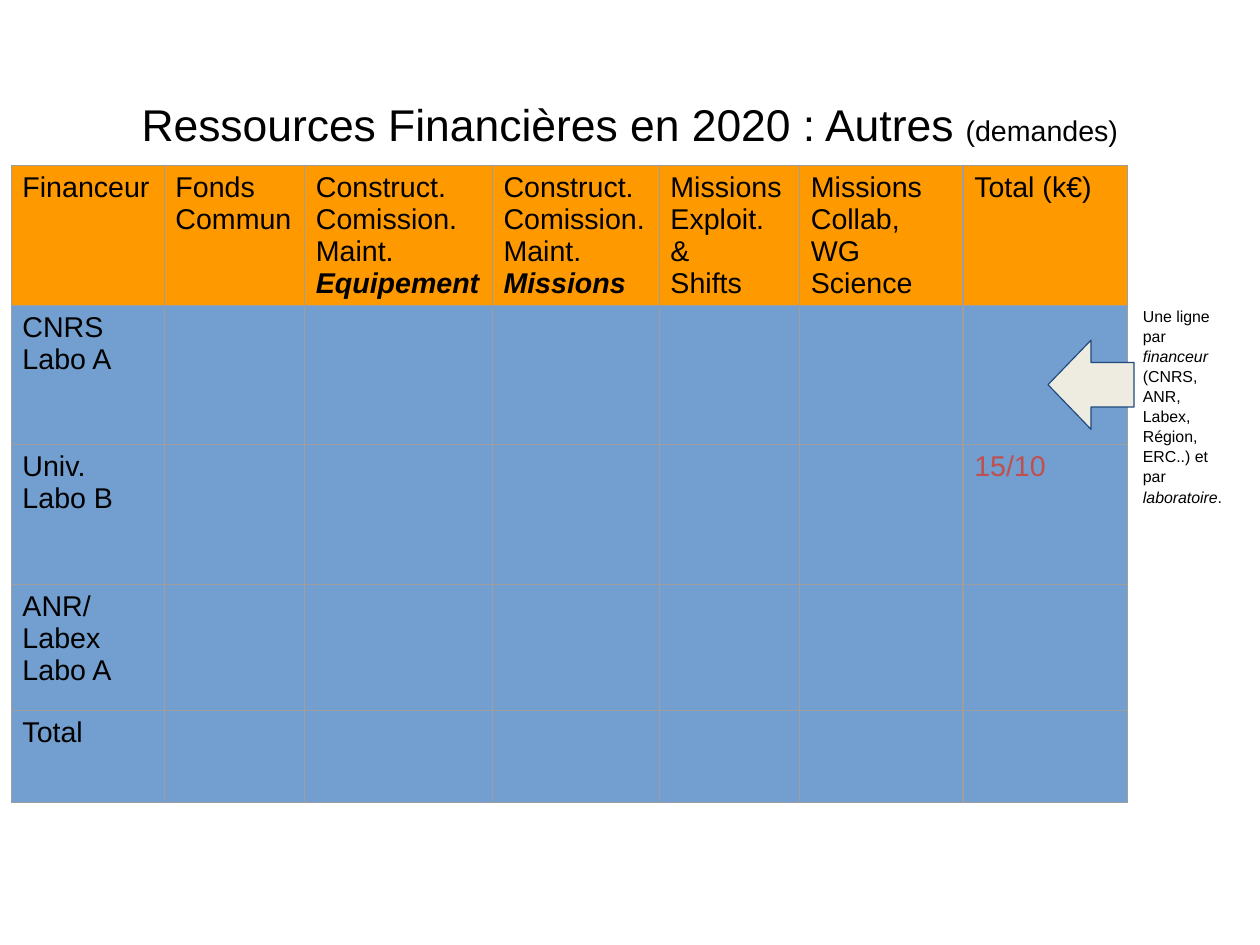
from pptx import Presentation
from pptx import util as u
from pptx.dml import color
from pptx.enum import shapes, text
from pptx.oxml import parse_xml
from pptx.oxml.ns import nsdecls

BLACK, ORANGE, BLUE, GREY = "000000", "FF9900", "729FCF", "9E9E9E"
BORDER = ('<a:{side} {ns} w="9525"><a:solidFill><a:srgbClr val="{hex}"/>'
          '</a:solidFill></a:{side}>')
COLS = [3.4, 3.12, 4.17, 3.71, 3.12, 3.63, 3.66]
ROWS = [2.6, 3.1, 3.1, 2.8, 2.06]
HEADER = [
    ["Financeur"],
    ["Fonds Commun"],
    ["Construct.", "Comission.", "Maint.", "Equipement"],
    ["Construct.", "Comission.", "Maint.", "Missions"],
    ["Missions", "Exploit. &", "Shifts"],
    ["Missions", "Collab, WG", "Science"],
    ["Total (k€)"],
]
FINANCEURS = [["CNRS", "Labo A"], ["Univ.", "Labo B"], ["ANR/Labex", "Labo A"], ["Total"]]


def rgb(hex_):
    return color.RGBColor.from_string(hex_)


def add_run(p, content, size=18, hex_=BLACK, bold=False, italic=False):
    r = p.add_run()
    r.text = content
    f = r.font
    f.name, f.size, f.bold, f.italic = "Arial", u.Pt(size), bold, italic
    f.color.rgb = rgb(hex_)


def place(sp, left, top, width, height):
    sp.left, sp.top, sp.width, sp.height = map(u.Cm, (left, top, width, height))


def set_margins(tf, side, top):
    tf.margin_left = tf.margin_right = u.Cm(side)
    tf.margin_top = tf.margin_bottom = u.Cm(top)


def add_title(s):
    sp = s.shapes.title
    place(sp, 0.96, 1.8, 26.07, 2.32)
    tf = sp.text_frame
    tf.word_wrap = True
    tf.auto_size = text.MSO_AUTO_SIZE.NONE
    tf.vertical_anchor = text.MSO_ANCHOR.TOP
    set_margins(tf, 0.25, 0.36)
    p = tf.paragraphs[0]
    p.alignment = text.PP_ALIGN.CENTER
    add_run(p, "Ressources Financières en 2020 : Autres ", size=28)
    add_run(p, "(demandes)")


def format_cell(cell, fill):
    tc_pr = cell._tc.get_or_add_tcPr()
    for side in ("lnL", "lnR", "lnT", "lnB"):
        tc_pr.append(parse_xml(BORDER.format(side=side, ns=nsdecls("a"), hex=GREY)))
    cell.fill.solid()
    cell.fill.fore_color.rgb = rgb(fill)
    set_margins(cell, 0.25, 0.13)


def write_cell(cell, lines, hex_=BLACK):
    tf = cell.text_frame
    for i, line in enumerate(lines):
        p = tf.add_paragraph() if i else tf.paragraphs[0]
        emphasis = i == 3
        add_run(p, line, hex_=hex_, bold=emphasis, italic=emphasis)


def add_table(s):
    frame = s.shapes.add_table(len(ROWS), len(COLS), u.Cm(0.25), u.Cm(3.68),
                               u.Cm(sum(COLS)), u.Cm(sum(ROWS)))
    tbl = frame.table
    tbl.first_row = tbl.horz_banding = False
    for col, width in zip(tbl.columns, COLS):
        col.width = u.Cm(width)
    for i, (row, height) in enumerate(zip(tbl.rows, ROWS)):
        row.height = u.Cm(height)
        for cell in row.cells:
            format_cell(cell, BLUE if i else ORANGE)
    for j, lines in enumerate(HEADER):
        write_cell(tbl.cell(0, j), lines)
    for i, lines in enumerate(FINANCEURS, 1):
        write_cell(tbl.cell(i, 0), lines)
    write_cell(tbl.cell(2, 6), ["15/10"], hex_="C0504D")


def add_note(s, *runs):
    sp = s.shapes.add_textbox(0, 0, 0, 0)
    place(sp, 25.15, 6.55, 2.29, 4.88)
    tf = sp.text_frame
    tf.word_wrap = True
    set_margins(tf, 0.25, 0.25)
    p = tf.paragraphs[0]
    p.line_spacing = 1.05
    for content, italic in runs:
        add_run(p, content, size=10, italic=italic)


def add_arrow(s):
    sp = s.shapes.add_shape(shapes.MSO_SHAPE.LEFT_ARROW, 0, 0, 0, 0)
    place(sp, 23.29, 7.56, 1.91, 1.98)
    sp.shadow.inherit = False
    sp.fill.solid()
    sp.fill.fore_color.rgb = rgb("EEECE1")
    sp.line.color.rgb = rgb("1F497D")
    sp.line.width = u.Pt(0.75)


def main():
    prs = Presentation()
    prs.slide_width, prs.slide_height = u.Cm(28), u.Cm(21)
    s = prs.slides.add_slide(prs.slide_layouts[5])
    add_title(s)
    add_table(s)
    add_note(s, ("Une ligne par ", False), ("financeur", True),
             (" (CNRS, ANR, Labex, Région, ERC..) et par ", False),
             ("laboratoire", True), (".", False))
    add_arrow(s)
    prs.save("out.pptx")


if __name__ == "__main__":
    main()
